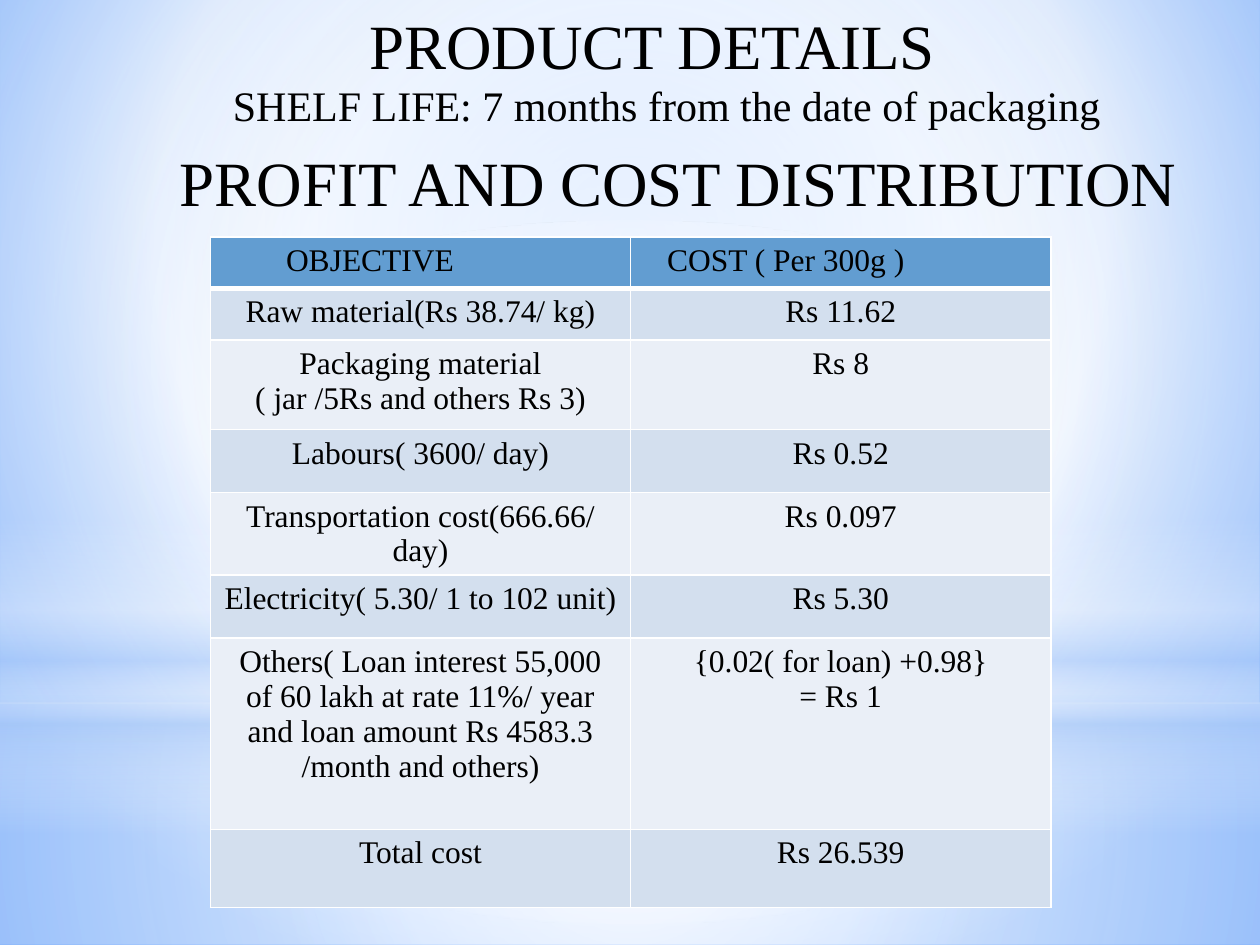
from lxml.etree import SubElement
from pptx import Presentation
from pptx.dml.color import RGBColor
from pptx.enum.shapes import MSO_SHAPE
from pptx.enum.text import MSO_ANCHOR, MSO_AUTO_SIZE, PP_ALIGN
from pptx.oxml import parse_xml
from pptx.oxml.ns import nsdecls, qn
from pptx.util import Inches, Pt

FONT = "Times New Roman"
INK, WHITE = "000000", "FFFFFF"
SKY = "ACCBF9"
HEADER_FILL, ROW_FILLS = "629DD1", ("D3DFEE", "EAEFF7")

TITLE = ("PRODUCT DETAILS", 36, (2.58, 0, 5.33, 0.71), 0.35)
HEADINGS = [
    ("SHELF LIFE: 7 months from the date of packaging", 24, (1.75, 0.58, 7.33, 0.5), 0.1),
    ("PROFIT AND COST DISTRIBUTION", 36, (1.33, 1.09, 8.17, 0.71), 0.1),
]
COST_ROWS = [
    (0.41, ["OBJECTIVE"], ["COST ( Per 300g )"]),
    (0.41, ["Raw material(Rs 38.74/ kg)"], ["Rs 11.62"]),
    (0.71, ["Packaging material", "( jar /5Rs and others Rs 3)"], ["Rs 8"]),
    (0.5, ["Labours( 3600/ day)"], ["Rs 0.52"]),
    (0.5, ["Transportation cost(666.66/ day)"], ["Rs 0.097"]),
    (0.5, ["Electricity( 5.30/ 1 to 102 unit)"], ["Rs 5.30"]),
    (1.52, ["Others( Loan interest 55,000 of 60 lakh at rate 11%/ year "
            "and loan amount Rs 4583.3 /month and others)"],
     ["{0.02( for loan) +0.98}", "= Rs 1"]),
    (0.62, ["Total cost"], ["Rs 26.539"]),
]
HEADER_MARGINS = (0.6, 0.29)
TABLE_BOX = (1.67, 1.88, 6.67, 5.17)

CENTRE = '<a:path path="circle"><a:fillToRect l="50000" t="50000" r="50000" b="50000"/></a:path>'
HIGH = '<a:path path="circle"><a:fillToRect l="20000" t="10000" r="20000" b="60000"/></a:path>'
DOWN = '<a:lin ang="5400000" scaled="0"/>'
BACKDROP = [(0, "95C0FF", 100), (60, WHITE, 100), (100, "5599FF", 100)]
GLOWS = [
    (MSO_SHAPE.RECTANGLE, (0, 5.58, 10, 1.92), CENTRE,
     [(0, WHITE, 91), (37, WHITE, 76), (100, SKY, 79)]),
    (MSO_SHAPE.RECTANGLE, (0, 0, 10, 5.58), CENTRE,
     [(0, WHITE, 89), (48, WHITE, 62), (100, SKY, 79)]),
    (MSO_SHAPE.RECTANGLE, (0, 4.12, 10, 2.5), DOWN,
     [(0, WHITE, 0), (29, WHITE, 30), (45, SKY, 40), (55, WHITE, 26), (65, SKY, 60), (100, WHITE, 0)]),
    (MSO_SHAPE.OVAL, (0, 1.75, 10, 5.58), CENTRE, [(0, WHITE, 100), (56, WHITE, 0)]),
]


def rgb(value):
    return RGBColor.from_string(value)


def box(values):
    return [Inches(v) for v in values]


def set_gradient(fill, element, stops, direction):
    fill.gradient()
    old = next(element.iter(qn("a:gradFill")))
    gs = "".join(
        f'<a:gs pos="{pos * 1000}"><a:srgbClr val="{color}">'
        f'<a:alpha val="{alpha * 1000}"/></a:srgbClr></a:gs>'
        for pos, color, alpha in stops)
    old.getparent().replace(old, parse_xml(
        f'<a:gradFill {nsdecls("a")} rotWithShape="1"><a:gsLst>{gs}</a:gsLst>{direction}</a:gradFill>'))


def write(tf, lines, size, align):
    for i, line in enumerate(lines):
        p = tf.paragraphs[0] if i == 0 else tf.add_paragraph()
        p.alignment = align
        r = p.add_run()
        r.text = line
        r.font.name, r.font.size, r.font.bold = FONT, Pt(size), False
        r.font.color.rgb = rgb(INK)


def set_heading(sp, text, size, place, margin):
    sp.left, sp.top, sp.width, sp.height = box(place)
    tf = sp.text_frame
    tf.word_wrap = True
    tf.auto_size = MSO_AUTO_SIZE.NONE
    tf.vertical_anchor = MSO_ANCHOR.TOP
    tf.margin_left = Inches(margin)
    write(tf, [text], size, PP_ALIGN.LEFT)


def set_borders(cell, widths):
    tcPr = cell._tc.get_or_add_tcPr()
    for i, (side, width) in enumerate(zip("LRTB", widths)):
        ln = SubElement(tcPr, qn(f"a:ln{side}"), w=str(Pt(width)))
        SubElement(SubElement(ln, qn("a:solidFill")), qn("a:srgbClr"), val=WHITE)
        tcPr.insert(i, ln)


def add_cost_table(s):
    table = s.shapes.add_table(len(COST_ROWS), 2, *box(TABLE_BOX)).table
    table.first_row = table.horz_banding = False
    for i, (height, *texts) in enumerate(COST_ROWS):
        table.rows[i].height = Inches(height)
        for j, lines in enumerate(texts):
            cell = table.cell(i, j)
            cell.fill.solid()
            cell.fill.fore_color.rgb = rgb(ROW_FILLS[(i - 1) % 2] if i else HEADER_FILL)
            set_borders(cell, (1, 1, 3 if i == 1 else 1, 3 if i == 0 else 1))
            if i == 0:
                cell.margin_left = Inches(HEADER_MARGINS[j])
            write(cell.text_frame, lines, 18, PP_ALIGN.CENTER if i else PP_ALIGN.LEFT)


def main():
    prs = Presentation()
    prs.slide_width, prs.slide_height = Inches(10), Inches(7.5)
    s = prs.slides.add_slide(prs.slide_layouts[5])
    set_gradient(s.background.fill, s._element, BACKDROP, HIGH)
    for kind, place, direction, stops in GLOWS:
        sp = s.shapes.add_shape(kind, *box(place))
        sp.shadow.inherit = False
        sp.line.fill.background()
        set_gradient(sp.fill, sp._element, stops, direction)
    title = s.shapes.title
    s.shapes._spTree.append(title._element)
    set_heading(title, *TITLE)
    for text, size, place, margin in HEADINGS:
        set_heading(s.shapes.add_textbox(*box(place)), text, size, place, margin)
    add_cost_table(s)
    prs.save("out.pptx")


if __name__ == "__main__":
    main()
